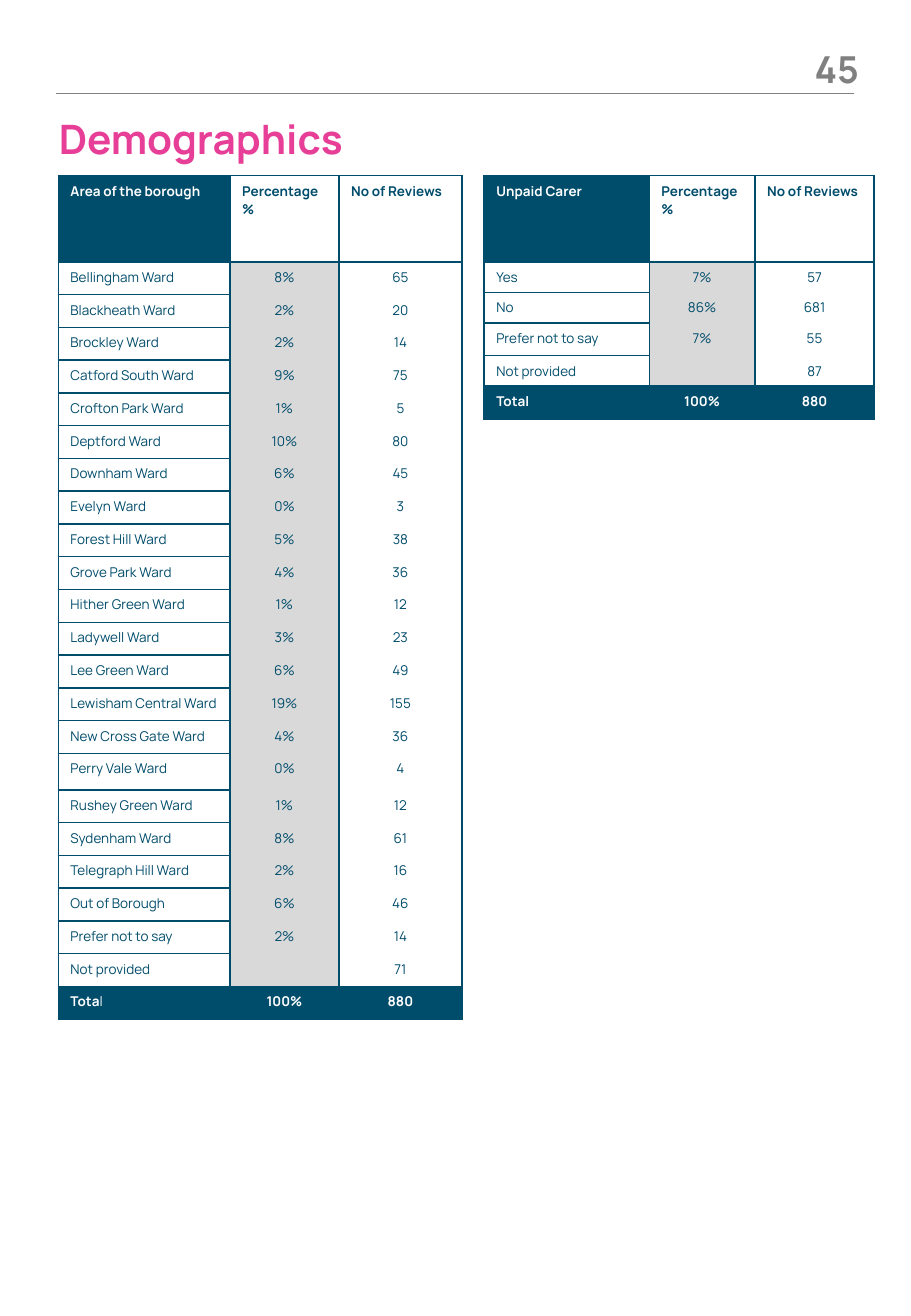
from dataclasses import dataclass

from lxml.etree import SubElement
from pptx import Presentation
from pptx.dml.color import RGBColor
from pptx.enum.shapes import MSO_CONNECTOR
from pptx.enum.text import MSO_ANCHOR, PP_ALIGN
from pptx.oxml.ns import qn
from pptx.util import Pt


@dataclass(frozen=True)
class Theme:
    font: str = "Manrope"
    navy: str = "004C6B"
    pink: str = "E73E97"
    grey: str = "808080"
    light_grey: str = "D9D9D9"
    white: str = "FFFFFF"
    title_size: int = 24
    page_number_size: int = 22
    table_size: int = 8
    line_width: float = 0.75
    border_width: int = 1


THEME = Theme()
PLAIN_TABLE_STYLE = "{2D5ABB26-0587-4C30-8999-92F81FD0307C}"
HEADER_HEIGHT = 51.12
ROW_HEIGHT = 19.44
SHORT_ROW_HEIGHT = 18.1
TALL_ROW_HEIGHT = 21.6

WARDS = [
    ("Bellingham Ward", "8%", "65"),
    ("Blackheath Ward", "2%", "20"),
    ("Brockley Ward", "2%", "14"),
    ("Catford South Ward", "9%", "75"),
    ("Crofton Park Ward", "1%", "5"),
    ("Deptford Ward", "10%", "80"),
    ("Downham Ward", "6%", "45"),
    ("Evelyn Ward", "0%", "3"),
    ("Forest Hill Ward", "5%", "38"),
    ("Grove Park Ward", "4%", "36"),
    ("Hither Green Ward", "1%", "12"),
    ("Ladywell Ward", "3%", "23"),
    ("Lee Green Ward", "6%", "49"),
    ("Lewisham Central Ward", "19%", "155"),
    ("New Cross Gate Ward", "4%", "36"),
    ("Perry Vale Ward", "0%", "4"),
    ("Rushey Green Ward", "1%", "12"),
    ("Sydenham Ward", "8%", "61"),
    ("Telegraph Hill Ward", "2%", "16"),
    ("Out of Borough", "6%", "46"),
    ("Prefer not to say", "2%", "14"),
    ("Not provided", "", "71"),
    ("Tota", "100%", "880"),
]

CARERS = [
    ("Yes", "7%", "57"),
    ("No", "86%", "681"),
    ("Prefer not to say", "7%", "55"),
    ("Not provided", "", "87"),
    ("Total", "100%", "880"),
]


def format_run(run, size, color, bold):
    run.font.name = THEME.font
    run.font.size = Pt(size)
    run.font.bold = bold
    run.font.color.rgb = RGBColor.from_string(color)


def format_text(text_frame, size, color, bold, alignment):
    for paragraph in text_frame.paragraphs:
        paragraph.alignment = alignment
        for run in paragraph.runs:
            format_run(run, size, color, bold)
        if not paragraph.runs:
            SubElement(paragraph._p, qn("a:endParaRPr"), sz=str(size * 100))


def add_text(slide, text, box, size, color, alignment, anchor):
    shape = slide.shapes.add_textbox(*map(Pt, box))
    text_frame = shape.text_frame
    text_frame.word_wrap = True
    text_frame.vertical_anchor = anchor
    text_frame.margin_left = text_frame.margin_right = 0
    text_frame.margin_top = text_frame.margin_bottom = 0
    text_frame.text = text
    format_text(text_frame, size, color, True, alignment)
    return text_frame


def add_rule(slide, left, right, top):
    connector = slide.shapes.add_connector(
        MSO_CONNECTOR.STRAIGHT, Pt(left), Pt(top), Pt(right), Pt(top)
    )
    connector.line.color.rgb = RGBColor.from_string(THEME.grey)
    connector.line.width = Pt(THEME.line_width)
    SubElement(connector._element.spPr, qn("a:effectLst"))


def set_borders(cell, sides):
    properties = cell._tc.get_or_add_tcPr()
    for side in sides:
        line = SubElement(properties, qn(f"a:ln{side}"), w=str(Pt(THEME.border_width)))
        fill = SubElement(line, qn("a:solidFill"))
        SubElement(fill, qn("a:srgbClr"), val=THEME.navy)


def fill_cell(cell, text, column, is_header, is_total):
    dark = is_total or (is_header and column == 0)
    shaded = column == 1 and not is_header
    background = THEME.navy if dark else THEME.light_grey if shaded else THEME.white
    centred = column > 0 and not is_header
    cell.text_frame.text = text
    format_text(
        cell.text_frame,
        THEME.table_size,
        THEME.white if dark else THEME.navy,
        is_header or is_total,
        PP_ALIGN.CENTER if centred else PP_ALIGN.LEFT,
    )
    set_borders(cell, "LRTB" if is_header or is_total or column == 0 else "LR")
    cell.fill.solid()
    cell.fill.fore_color.rgb = RGBColor.from_string(background)


def add_review_table(slide, left, top, heading, records, widths, heights):
    rows = [(heading, "Percentage\n%", "No of Reviews"), *records]
    frame = slide.shapes.add_table(
        len(rows), len(widths), Pt(left), Pt(top), Pt(sum(widths)), Pt(sum(heights))
    )
    table = frame.table
    table.first_row = table.horz_banding = False
    table._tbl.tblPr.find(qn("a:tableStyleId")).text = PLAIN_TABLE_STYLE
    for column, width in zip(table.columns, widths):
        column.width = Pt(width)
    for row, height in zip(table.rows, heights):
        row.height = Pt(height)
    for row_index, values in enumerate(rows):
        for column_index, text in enumerate(values):
            fill_cell(
                table.cell(row_index, column_index),
                text,
                column_index,
                row_index == 0,
                row_index == len(records),
            )
    return table


def main():
    presentation = Presentation()
    presentation.slide_width = Pt(540)
    presentation.slide_height = Pt(779.76)
    slide = presentation.slides.add_slide(presentation.slide_layouts[6])

    add_rule(slide, 33.12, 506.16, 55.44)
    title = add_text(slide, "Demographics", (34.9, 44.5, 470.9, 102.2),
                     THEME.title_size, THEME.pink, PP_ALIGN.LEFT, MSO_ANCHOR.TOP)
    title.paragraphs[0].line_spacing = Pt(52)
    add_text(slide, "45", (462.96, 26.64, 46.08, 28.08),
             THEME.page_number_size, THEME.grey, PP_ALIGN.RIGHT, MSO_ANCHOR.MIDDLE)

    ward_heights = [HEADER_HEIGHT] + [
        TALL_ROW_HEIGHT if name == "Perry Vale Ward" else ROW_HEIGHT
        for name, *_ in WARDS
    ]
    wards = add_review_table(slide, 34.56, 104, "Area of the borough", WARDS,
                             (101.8, 64.6, 72.9), ward_heights)
    last_letter = wards.cell(len(WARDS), 0).text_frame.paragraphs[0].add_run()
    last_letter.text = "l"
    format_run(last_letter, THEME.table_size, THEME.white, False)

    carer_heights = [HEADER_HEIGHT, SHORT_ROW_HEIGHT, SHORT_ROW_HEIGHT,
                     ROW_HEIGHT, SHORT_ROW_HEIGHT, ROW_HEIGHT]
    add_review_table(slide, 287, 104, "Unpaid Carer", CARERS,
                     (97.9, 62.7, 70.6), carer_heights)
    presentation.save("out.pptx")


if __name__ == "__main__":
    main()
